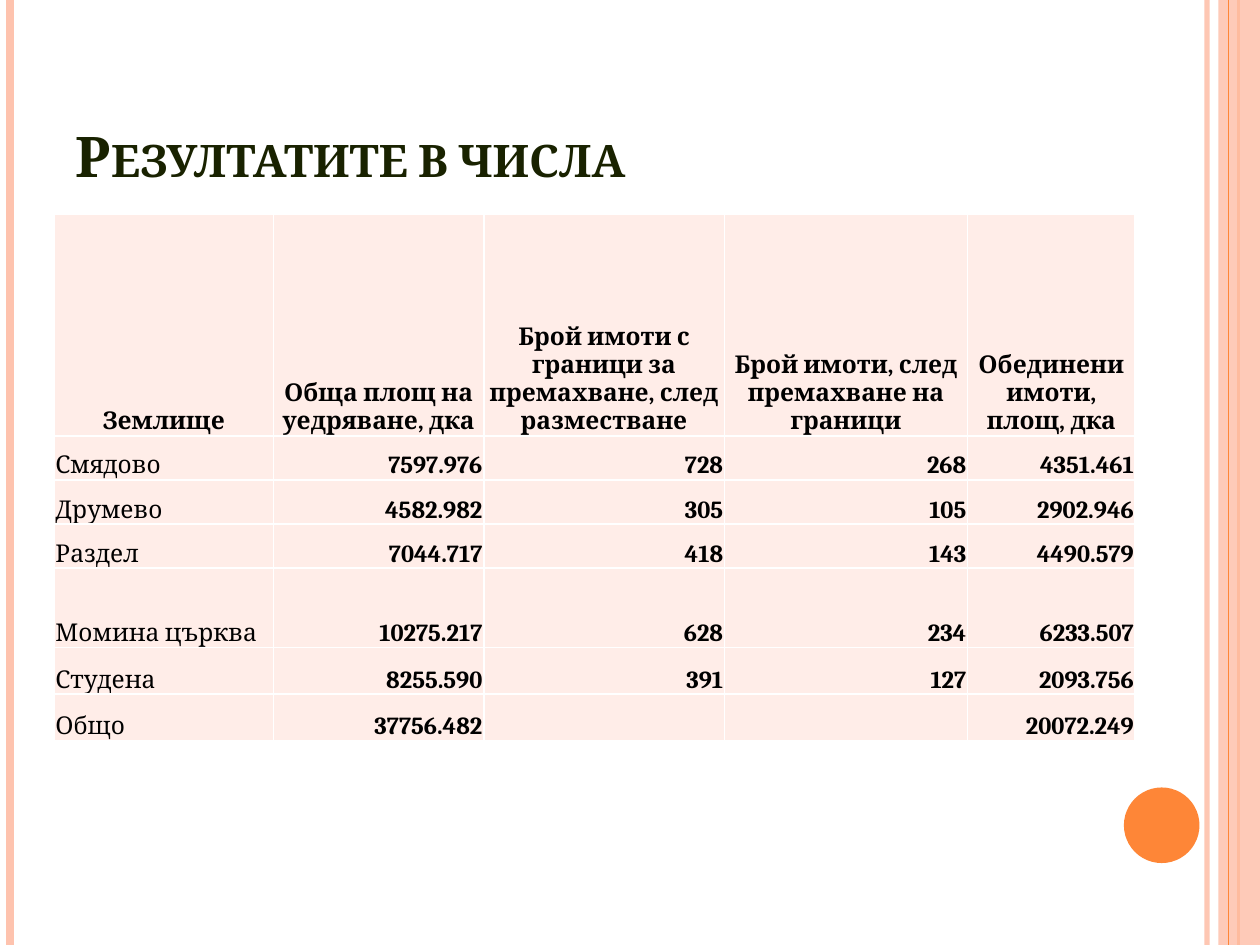
from dataclasses import dataclass

from lxml.etree import SubElement
from pptx import Presentation
from pptx.dml.color import RGBColor
from pptx.enum.shapes import MSO_CONNECTOR, MSO_SHAPE
from pptx.enum.text import MSO_ANCHOR, PP_ALIGN
from pptx.oxml import parse_xml
from pptx.oxml.ns import nsdecls, qn
from pptx.util import Inches, Pt

COLORS = {
    "peach": "FEC3AE",
    "orange": "FE8637",
    "title": "192200",
    "cell": "FFEDE8",
    "border": "FFFFFF",
    "text": "000000",
}
FONT = "Cambria"
SLIDE_WIDTH, SLIDE_HEIGHT = 10, 7.5
COLUMN_WIDTHS = [1.74, 1.67, 1.91, 1.93, 1.33]
ROW_HEIGHTS = [1.76, 0.35, 0.35, 0.35, 0.63, 0.37, 0.37]
ROWS = [
    ["Землище", "Обща площ на уедряване, дка",
     "Брой имоти с граници за премахване, след разместване",
     "Брой имоти, след премахване на граници", "Обединени имоти, площ, дка"],
    ["Смядово", "7597.976", "728", "268", "4351.461"],
    ["Друмево", "4582.982", "305", "105", "2902.946"],
    ["Раздел", "7044.717", "418", "143", "4490.579"],
    ["Момина църква", "10275.217", "628", "234", "6233.507"],
    ["Студена", "8255.590", "391", "127", "2093.756"],
    ["Общо", "37756.482", "", "", "20072.249"],
]


@dataclass
class Stripe:
    x: float
    color: str
    width: float
    opacity: int = 100


@dataclass
class Panel:
    kind: MSO_SHAPE
    box: tuple[float, float, float, float]
    color: str
    opacity: int = 100


DECORATIONS = [
    Stripe(9.58, "peach", 3, 93),
    Stripe(0.08, "peach", 4.5),
    Stripe(9.83, "orange", 1.5),
    Panel(MSO_SHAPE.RECTANGLE, (9.67, 0, 0.33, SLIDE_HEIGHT), "peach", 87),
    Stripe(9.75, "orange", 0.75),
    Panel(MSO_SHAPE.OVAL, (8.92, 6.25, 0.6, 0.6), "orange"),
]


def rgb(name: str) -> RGBColor:
    return RGBColor.from_string(COLORS[name])


def set_opacity(element, percent: int) -> None:
    if percent < 100:
        color = next(element.iter(qn("a:srgbClr")))
        SubElement(color, qn("a:alpha")).set("val", str(percent * 1000))


def add_stripe(slide, stripe: Stripe) -> None:
    x = Inches(stripe.x)
    connector = slide.shapes.add_connector(
        MSO_CONNECTOR.STRAIGHT, x, 0, x, Inches(SLIDE_HEIGHT))
    connector.line.color.rgb = rgb(stripe.color)
    connector.line.width = Pt(stripe.width)
    properties = connector._element.spPr
    set_opacity(properties, stripe.opacity)
    SubElement(properties, qn("a:effectLst"))


def add_panel(slide, panel: Panel) -> None:
    shape = slide.shapes.add_shape(panel.kind, *map(Inches, panel.box))
    shape.shadow.inherit = False
    shape.fill.solid()
    shape.fill.fore_color.rgb = rgb(panel.color)
    shape.line.fill.background()
    set_opacity(shape._element.spPr, panel.opacity)


def format_runs(paragraph, size: float, color: str, bold: bool) -> None:
    for run in paragraph.runs:
        run.font.name = FONT
        run.font.size = Pt(size)
        run.font.bold = bold
        run.font.color.rgb = rgb(color)


def add_title(slide, text: str) -> None:
    shape = slide.shapes.add_textbox(
        Inches(0.5), Inches(0.3), Inches(8.17), Inches(1.25))
    text_frame = shape.text_frame
    text_frame.word_wrap = True
    text_frame.vertical_anchor = MSO_ANCHOR.BOTTOM
    text_frame.text = text
    paragraph = text_frame.paragraphs[0]
    format_runs(paragraph, 32, "title", True)
    paragraph.runs[0].font._element.set("cap", "small")


def add_borders(cell) -> None:
    properties = cell._tc.get_or_add_tcPr()
    for index, side in enumerate("LRTB"):
        border = parse_xml(
            f'<a:ln{side} {nsdecls("a")} w="{Pt(1)}"><a:solidFill>'
            f'<a:srgbClr val="{COLORS["border"]}"/></a:solidFill></a:ln{side}>')
        properties.insert(index, border)


def format_cell(cell, text: str, alignment: PP_ALIGN, bold: bool) -> None:
    cell.fill.solid()
    cell.fill.fore_color.rgb = rgb("cell")
    cell.margin_left = cell.margin_right = cell.margin_top = Inches(0.01)
    cell.margin_bottom = 0
    cell.vertical_anchor = MSO_ANCHOR.BOTTOM
    add_borders(cell)
    if text:
        cell.text_frame.text = text
        paragraph = cell.text_frame.paragraphs[0]
        paragraph.alignment = alignment
        format_runs(paragraph, 14, "text", bold)


def add_results_table(slide) -> None:
    table = slide.shapes.add_table(
        len(ROWS), len(COLUMN_WIDTHS), Inches(0.43), Inches(1.7),
        Inches(sum(COLUMN_WIDTHS)), Inches(sum(ROW_HEIGHTS))).table
    table.first_row = table.horz_banding = False
    for column, width in zip(table.columns, COLUMN_WIDTHS):
        column.width = Inches(width)
    for row, height in zip(table.rows, ROW_HEIGHTS):
        row.height = Inches(height)
    for row_index, values in enumerate(ROWS):
        for column_index, text in enumerate(values):
            is_header = row_index == 0
            is_name = column_index == 0 and not is_header
            alignment = (PP_ALIGN.CENTER if is_header
                         else PP_ALIGN.LEFT if is_name else PP_ALIGN.RIGHT)
            format_cell(table.cell(row_index, column_index), text,
                        alignment, not is_name)


def main() -> None:
    """Build the slide with the land consolidation results."""
    presentation = Presentation()
    presentation.slide_width = Inches(SLIDE_WIDTH)
    presentation.slide_height = Inches(SLIDE_HEIGHT)
    slide = presentation.slides.add_slide(presentation.slide_layouts[6])
    for decoration in DECORATIONS:
        if isinstance(decoration, Stripe):
            add_stripe(slide, decoration)
        else:
            add_panel(slide, decoration)
    add_title(slide, "Резултатите в числа")
    add_results_table(slide)
    presentation.save("out.pptx")


if __name__ == "__main__":
    main()
